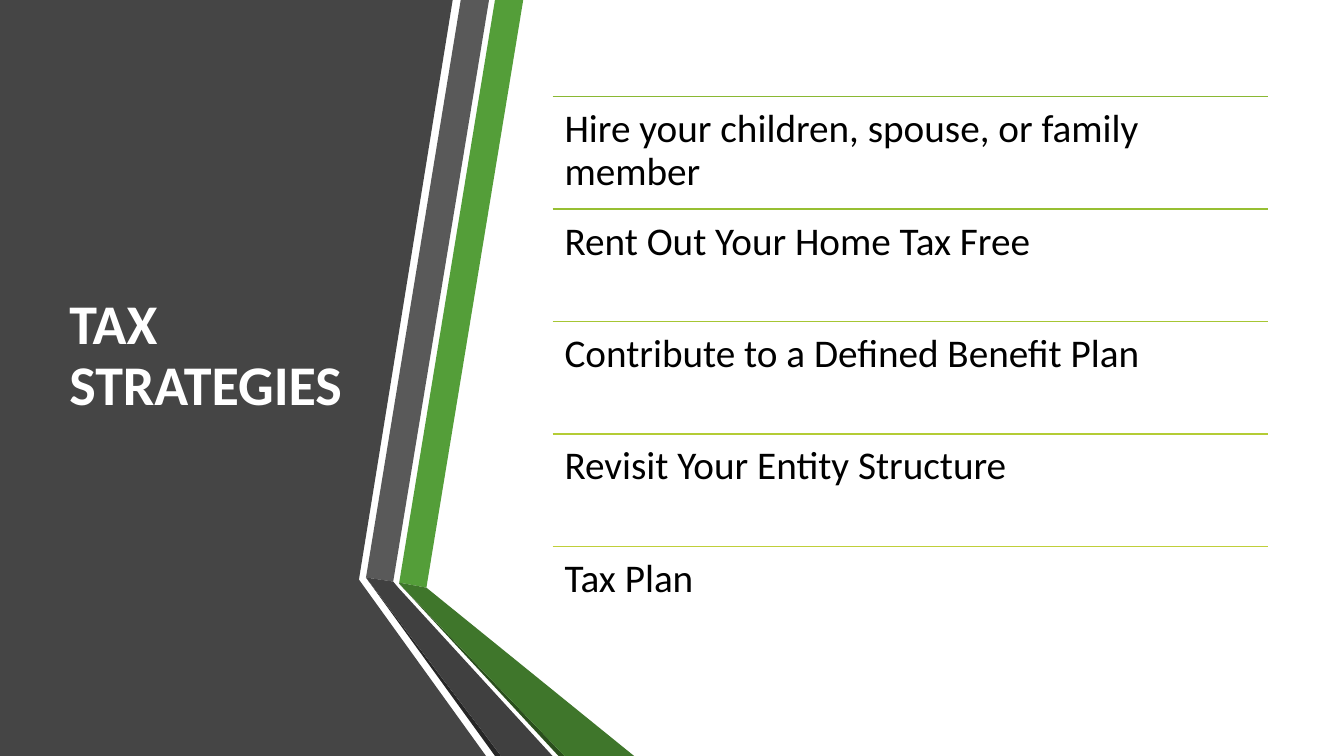
from lxml.etree import SubElement
from pptx import Presentation
from pptx.dml.color import RGBColor
from pptx.enum.shapes import MSO_CONNECTOR as Connector
from pptx.enum.text import MSO_ANCHOR as Anchor
from pptx.oxml.ns import qn
from pptx.util import Inches, Pt

# Content: each strategy with the colour of the rule above it
TITLE = "TAX STRATEGIES"
STRATEGIES = [
    ("Hire your children, spouse, or family member", "8AB833"),
    ("Rent Out Your Home Tax Free", "97BF33"),
    ("Contribute to a Defined Benefit Plan", "A6C634"),
    ("Revisit Your Entity Structure", "B4CC35"),
    ("Tax Plan", "C0CF3A"),
]

THEME = {
    "font": "Calibri", "title_size": 40, "item_size": 28, "rule_width": 1,
    "title": "FFFFFF", "item": "000000",
    "panel": "454545", "green": "549E39", "gray": "595959",
    "gray_edge": "262626", "green_edge": "2A4F1C",
    "green_fold": "3F762B", "gray_fold": "404040",
}

# Folded ribbon outlines in inches, back to front
OUTLINES = [
    ("panel", [(0, 0), (4.49, 0), (3.56, 5.75), (4.82, 7.5), (0, 7.5)]),
    ("green", [(3.96, 5.78), (4.23, 5.83), (5.19, 0), (4.91, 0)]),
    ("gray", [(4.85, 0), (4.57, 0), (3.63, 5.73), (3.9, 5.77)]),
    ("gray_edge", [(3.63, 5.73), (4.91, 7.5), (4.97, 7.5)]),
    ("green_edge", [(3.96, 5.79), (5.54, 7.5), (5.6, 7.5)]),
    ("green_fold", [(3.96, 5.78), (3.96, 5.79), (5.6, 7.5), (6.29, 7.5), (4.23, 5.83)]),
    ("gray_fold", [(3.63, 5.73), (4.97, 7.5), (5.48, 7.5), (3.95, 5.83), (3.9, 5.77)]),
]

LIST_LEFT, LIST_TOP, LIST_WIDTH, ROW_HEIGHT = 5.48, 0.96, 7.1, 1.115


def add_outline(page, color, points):
    start, *rest = [(Inches(x), Inches(y)) for x, y in points]
    builder = page.shapes.build_freeform(*start)
    builder.add_line_segments(rest, close=True)
    shape = builder.convert_to_shape()
    shape.shadow.inherit = False
    shape.fill.solid()
    shape.fill.fore_color.rgb = RGBColor.from_string(color)
    shape.line.fill.background()


def add_text(page, text, area, size, color, bold=False, anchor=Anchor.TOP, inset=0.12):
    box = page.shapes.add_textbox(*map(Inches, area))
    frame = box.text_frame
    frame.word_wrap = True
    frame.vertical_anchor = anchor
    frame.margin_left = frame.margin_right = Inches(inset)
    frame.margin_top = frame.margin_bottom = Inches(inset)
    para = frame.paragraphs[0]
    para.text = text
    para.line_spacing = 0.9
    para.font.name = THEME["font"]
    para.font.size = Pt(size)
    para.font.bold = bold
    para.font.color.rgb = RGBColor.from_string(color)


def add_rule(page, left, top, width, color):
    rule = page.shapes.add_connector(
        Connector.STRAIGHT, Inches(left), Inches(top), Inches(left + width), Inches(top))
    rule.line.width = Pt(THEME["rule_width"])
    rule.line.color.rgb = RGBColor.from_string(color)
    SubElement(rule._element.spPr, qn("a:effectLst"))


def main():
    deck = Presentation()
    deck.slide_width, deck.slide_height = Inches(13.33), Inches(7.5)
    page = deck.slides.add_slide(deck.slide_layouts[6])

    # Dark panel and folded ribbons
    for color_name, points in OUTLINES:
        add_outline(page, THEME[color_name], points)

    # Title
    add_text(page, TITLE, (0.59, 0.75, 3.04, 5.58), THEME["title_size"],
             THEME["title"], bold=True, anchor=Anchor.MIDDLE, inset=0.1)

    # Ruled list of strategies
    for row, (strategy, color) in enumerate(STRATEGIES):
        top = LIST_TOP + row * ROW_HEIGHT
        add_rule(page, LIST_LEFT, top, LIST_WIDTH, color)
        add_text(page, strategy, (LIST_LEFT, top, LIST_WIDTH, ROW_HEIGHT),
                 THEME["item_size"], THEME["item"])

    deck.save("out.pptx")


if __name__ == "__main__":
    main()
